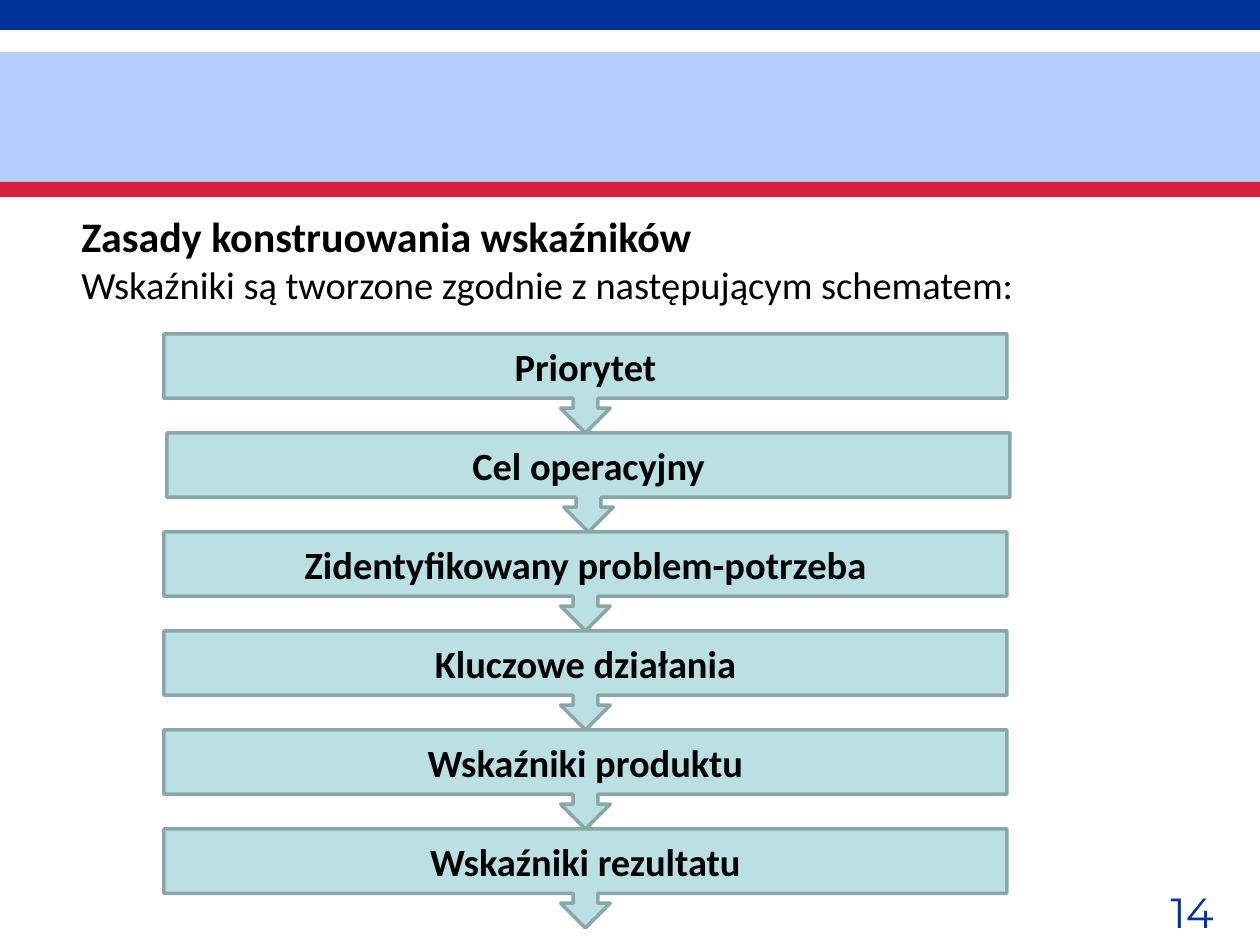
import pptx
import pptx.dml.color
import pptx.enum.shapes
import pptx.enum.text
import pptx.util

SHAPE = pptx.enum.shapes.MSO_SHAPE
ALIGN = pptx.enum.text.PP_ALIGN
ANCHOR = pptx.enum.text.MSO_ANCHOR

PX_PER_INCH = 126
SLIDE_W, SLIDE_H = 1260, 945
COLORS = {
    "navy": "003399",
    "sky": "B7CFFF",
    "red": "D4213D",
    "step": "BBE0E3",
    "step_line": "8AA6A8",
    "text": "000000",
}
# Header bands: colour, top within the header, height
BANDS = [("navy", 0, 30), ("sky", 52, 130), ("red", 182, 15)]
STEPS = [
    "Priorytet",
    "Cel operacyjny",
    "Zidentyfikowany problem-potrzeba",
    "Kluczowe działania",
    "Wskaźniki produktu",
    "Wskaźniki rezultatu",
]
STEP_SHIFTS = {"Cel operacyjny": 3}
HEADING_FORMAT = {"name": "Calibri", "size": pptx.util.Pt(24), "bold": True}
LEAD_FORMAT = {"name": "Calibri", "size": pptx.util.Pt(22), "bold": False}
STEP_FORMAT = {"name": "Calibri", "size": pptx.util.Pt(22), "bold": True}
NUMBER_FORMAT = {"name": "Montserrat", "size": pptx.util.Pt(24), "bold": False}


def px(*lengths):
    return [round(length * 914400 / PX_PER_INCH) for length in lengths]


def rgb(color):
    return pptx.dml.color.RGBColor.from_string(COLORS[color])


def write(paragraph, wording, font_format, align, color="text"):
    paragraph.alignment = align
    run = paragraph.add_run()
    run.text = wording
    for attribute, setting in font_format.items():
        setattr(run.font, attribute, setting)
    run.font.color.rgb = rgb(color)


def add_block(slide, preset, box, color):
    block = slide.shapes.add_shape(preset, *px(*box))
    block.shadow.inherit = False
    block.fill.solid()
    block.fill.fore_color.rgb = rgb(color)
    block.line.fill.background()
    return block


def add_text_frame(slide, box):
    frame = slide.shapes.add_textbox(*px(*box)).text_frame
    frame.word_wrap = True
    return frame


def add_header(slide, left, top, width):
    for color, offset, height in BANDS:
        add_block(slide, SHAPE.RECTANGLE, (left, top + offset, width, height), color)


def add_intro(slide, box):
    frame = add_text_frame(slide, box)
    write(frame.paragraphs[0], "Zasady konstruowania wskaźników",
          HEADING_FORMAT, ALIGN.JUSTIFY)
    write(frame.add_paragraph(),
          "Wskaźniki są tworzone zgodnie z następującym schematem:",
          LEAD_FORMAT, ALIGN.JUSTIFY)


def add_steps(slide, left, top, width, height):
    step_height = height // len(STEPS)
    for index, wording in enumerate(STEPS):
        box = (left + STEP_SHIFTS.get(wording, 0), top + index * step_height,
               width, step_height)
        step = add_block(slide, SHAPE.DOWN_ARROW_CALLOUT, box, "step")
        step.line.color.rgb = rgb("step_line")
        step.line.width = pptx.util.Pt(2)
        step.text_frame.vertical_anchor = ANCHOR.MIDDLE
        write(step.text_frame.paragraphs[0], wording, STEP_FORMAT, ALIGN.CENTER)


def add_page_number(slide, box):
    frame = add_text_frame(slide, box)
    write(frame.paragraphs[0], "14", NUMBER_FORMAT, ALIGN.RIGHT, "navy")


def main():
    deck = pptx.Presentation()
    deck.slide_width, deck.slide_height = px(SLIDE_W, SLIDE_H)
    slide = deck.slides.add_slide(deck.slide_layouts[6])

    # Page number and coloured header
    add_page_number(slide, (1137, 880, 89, 50))
    add_header(slide, 0, 0, SLIDE_W)

    # Heading with its lead-in
    add_intro(slide, (69, 204, 1143, 714))

    # Chain of steps
    add_steps(slide, 164, 334, 843, 594)

    deck.save("out.pptx")


if __name__ == "__main__":
    main()
